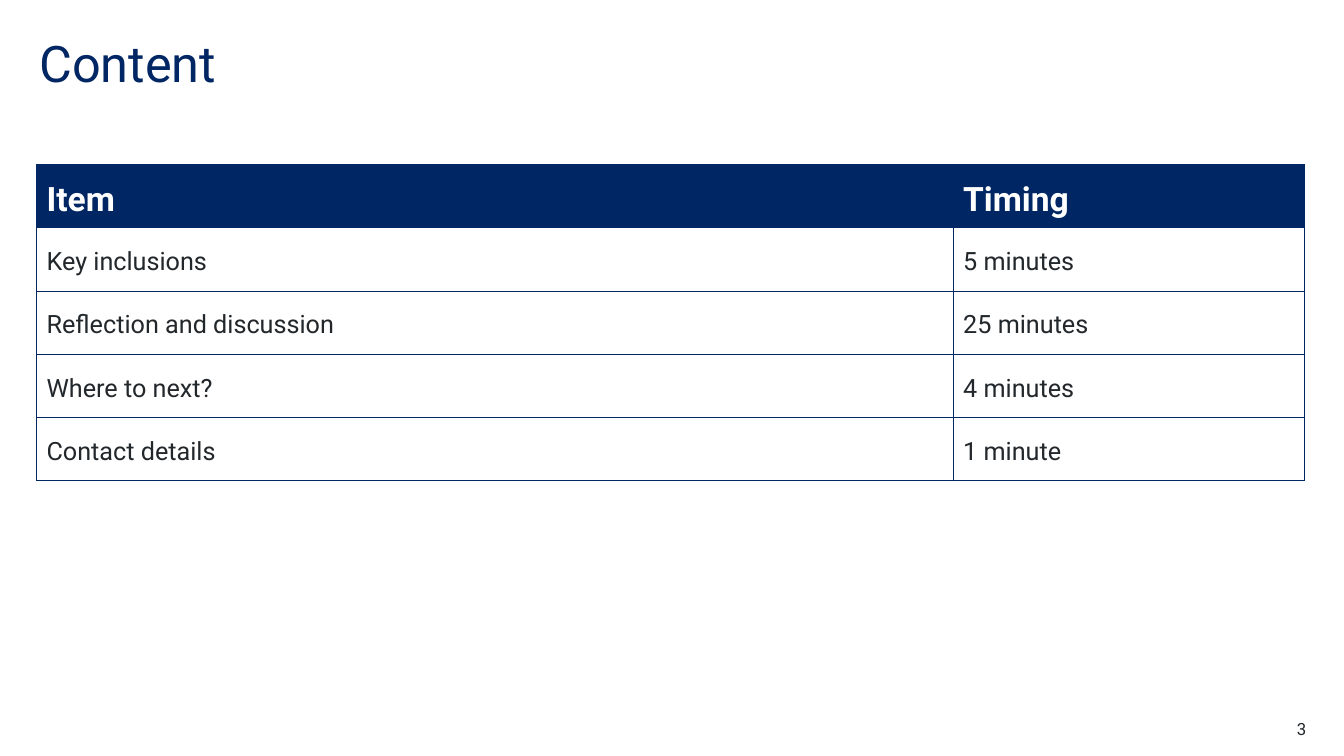
import dataclasses

import lxml.etree
import pptx
import pptx.dml.color
import pptx.enum.text
import pptx.oxml.ns
import pptx.util

Cm = pptx.util.Cm
Pt = pptx.util.Pt
Align = pptx.enum.text.PP_ALIGN


@dataclasses.dataclass(frozen=True)
class Theme:
    font: str = "Roboto"
    navy: str = "002664"
    ink: str = "22272B"
    white: str = "FFFFFF"
    title_size: int = 36
    header_size: int = 24
    body_size: int = 18
    number_size: int = 12
    border_width: float = 0.5


def rgb(value):
    return pptx.dml.color.RGBColor.from_string(value)


def write(frame, text, *, font, size, color, bold=False, align=Align.LEFT, spacing=1.0):
    para = frame.paragraphs[0]
    para.alignment = align
    para.line_spacing = spacing
    span = para.add_run()
    span.text = text
    span.font.name = font
    span.font.size = Pt(size)
    span.font.bold = bold
    span.font.color.rgb = rgb(color)


class Page:
    """A slide together with the theme used to draw on it."""

    def __init__(self, deck, theme):
        self.theme = theme
        self.slide = deck.slides.add_slide(deck.slide_layouts[6])

    def text(self, text, left, top, width, height, **style):
        box = self.slide.shapes.add_textbox(Cm(left), Cm(top), Cm(width), Cm(height))
        frame = box.text_frame
        frame.word_wrap = True
        frame.margin_left = frame.margin_right = frame.margin_top = frame.margin_bottom = 0
        write(frame, text, font=self.theme.font, **style)

    def border(self, cell):
        properties = cell._tc.get_or_add_tcPr()
        qn = pptx.oxml.ns.qn
        for side in ("lnL", "lnR", "lnT", "lnB"):
            line = lxml.etree.SubElement(properties, qn(f"a:{side}"), w=str(Pt(self.theme.border_width)))
            fill = lxml.etree.SubElement(line, qn("a:solidFill"))
            lxml.etree.SubElement(fill, qn("a:srgbClr"), val=self.theme.navy)

    def table(self, rows, left, top, widths, row_height):
        theme = self.theme
        header = dict(size=theme.header_size, color=theme.white, bold=True)
        body = dict(size=theme.body_size, color=theme.ink)
        table = self.slide.shapes.add_table(
            len(rows), len(widths), Cm(left), Cm(top), Cm(sum(widths)), Cm(row_height * len(rows))
        ).table
        table.horz_banding = False
        for column, width in zip(table.columns, widths):
            column.width = Cm(width)
        for row_index, values in enumerate(rows):
            is_header = row_index == 0
            for column_index, value in enumerate(values):
                cell = table.cell(row_index, column_index)
                cell.vertical_anchor = pptx.enum.text.MSO_ANCHOR.MIDDLE
                self.border(cell)
                cell.fill.solid()
                cell.fill.fore_color.rgb = rgb(theme.navy if is_header else theme.white)
                write(cell.text_frame, value, font=theme.font, spacing=1.2,
                      **(header if is_header else body))


def main():
    theme = Theme()
    deck = pptx.Presentation()
    deck.slide_width, deck.slide_height = Cm(33.87), Cm(19.05)
    page = Page(deck, theme)
    page.text("Content", 0.99, 0.99, 28, 2.79,
              size=theme.title_size, color=theme.navy, spacing=0.9)
    agenda = [
        ("Item", "Timing"),
        ("Key inclusions", "5 minutes"),
        ("Reflection and discussion", "25 minutes"),
        ("Where to next?", "4 minutes"),
        ("Contact details", "1 minute"),
    ]
    page.table(agenda, left=0.92, top=4.15, widths=(23.1, 8.86), row_height=1.59)
    page.text("3", 30.91, 18.11, 2.01, 0.51,
              size=theme.number_size, color=theme.ink, align=Align.RIGHT)
    deck.save("out.pptx")


if __name__ == "__main__":
    main()
